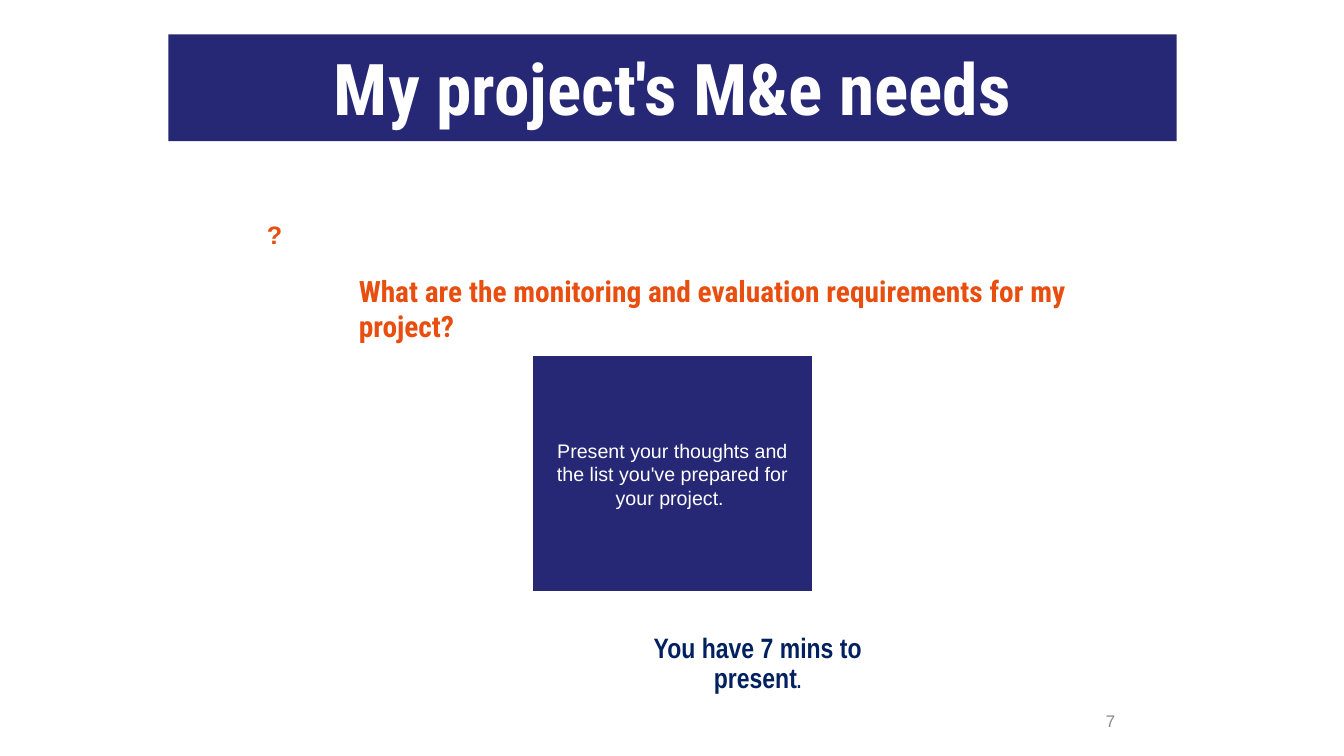
from pptx import Presentation
from pptx.dml.color import RGBColor
from pptx.enum.shapes import MSO_SHAPE
from pptx.enum.text import MSO_ANCHOR, PP_ALIGN
from pptx.util import Inches, Pt

COLORS = {
    "navy": "262775",
    "orange": "E84E0F",
    "deep_blue": "002060",
    "gray": "888888",
    "white": "FFFFFF",
}


def color(name):
    return RGBColor.from_string(COLORS[name])


def place(shape, left, top, width, height):
    shape.left, shape.top = Inches(left), Inches(top)
    shape.width, shape.height = Inches(width), Inches(height)


def write(shape, runs, font, ink, bold=False, align=PP_ALIGN.LEFT,
          anchor=MSO_ANCHOR.TOP, margin=0.05, line_spacing=1.0):
    frame = shape.text_frame
    frame.word_wrap = True
    frame.vertical_anchor = anchor
    frame.margin_left = frame.margin_right = Inches(0.1)
    frame.margin_top = frame.margin_bottom = Inches(margin)
    paragraph = frame.paragraphs[0]
    paragraph.alignment = align
    paragraph.line_spacing = line_spacing
    paragraph.space_before = Pt(0)
    for text, size in runs:
        run = paragraph.add_run()
        run.text = text
        run.font.name = font
        run.font.size = Pt(size)
        run.font.bold = bold
        run.font.color.rgb = color(ink)


def add_title(slide, text):
    title = slide.shapes.title
    place(title, 1.67, 0.34, 10, 1.06)
    title.fill.solid()
    title.fill.fore_color.rgb = color("navy")
    write(title, [(text, 51)], "Roboto Condensed", "white", bold=True,
          align=PP_ALIGN.CENTER, margin=0.1)


def add_text(slide, box, runs, font, ink, **style):
    shape = slide.shapes.add_textbox(*map(Inches, box))
    write(shape, runs, font, ink, **style)


def add_task_card(slide, box, text):
    card = slide.shapes.add_shape(MSO_SHAPE.RECTANGLE, *map(Inches, box))
    card.shadow.inherit = False
    card.fill.solid()
    card.fill.fore_color.rgb = color("navy")
    card.line.color.rgb = color("white")
    card.line.width = Pt(2)
    write(card, [(text, 14)], "Arial", "white",
          align=PP_ALIGN.CENTER, anchor=MSO_ANCHOR.MIDDLE)


def main():
    presentation = Presentation()
    presentation.slide_width = Inches(13.33)
    presentation.slide_height = Inches(7.5)
    slide = presentation.slides.add_slide(presentation.slide_layouts[5])

    add_title(slide, "My project's M&e needs")
    add_text(slide, (8.83, 6.95, 2.33, 0.4), [("7", 12)], "Arial", "gray",
             align=PP_ALIGN.RIGHT, anchor=MSO_ANCHOR.MIDDLE)
    add_text(slide, (3.46, 2.66, 7.52, 0.56),
             [("What are the monitoring and evaluation requirements for my project?", 21)],
             "Roboto Condensed", "orange", bold=True)
    add_text(slide, (2.55, 2.13, 0.86, 1.72), [("?", 18)], "Arial", "orange", bold=True)
    add_task_card(slide, (5.27, 3.52, 2.8, 2.36),
                  "Present your thoughts and the list you've prepared for your project. ")
    add_text(slide, (6.18, 6.24, 2.67, 0.71),
             [("You have 7 mins to present", 20), (".", 14)],
             "Arial Narrow", "deep_blue", bold=True,
             align=PP_ALIGN.CENTER, line_spacing=0.9)

    presentation.save("out.pptx")


if __name__ == "__main__":
    main()
